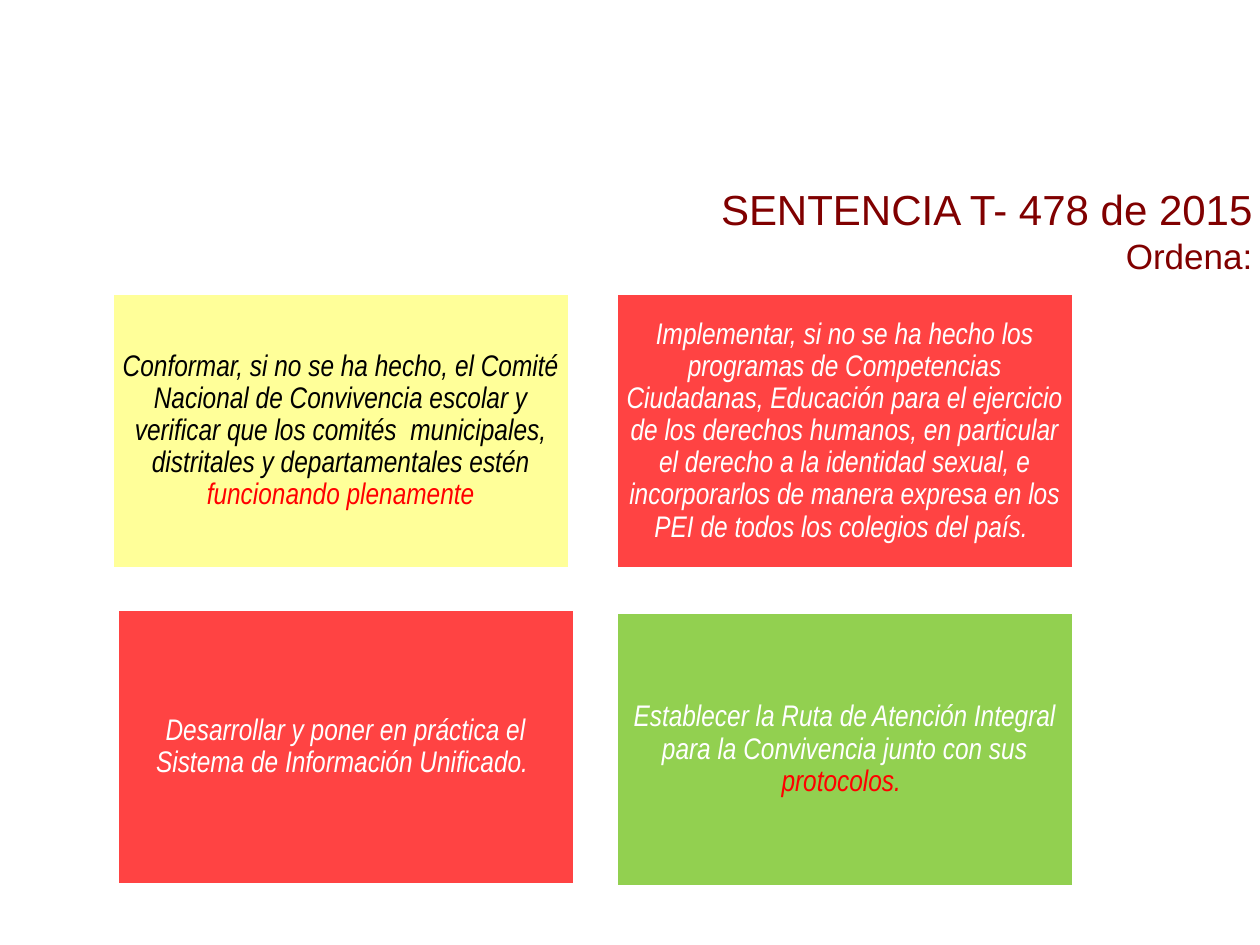
from dataclasses import dataclass
from lxml.etree import SubElement
from pptx import Presentation
from pptx.dml.color import RGBColor
from pptx.enum.shapes import MSO_SHAPE
from pptx.enum.text import MSO_ANCHOR, MSO_AUTO_SIZE, PP_ALIGN
from pptx.oxml.ns import qn
from pptx.util import Cm, Pt


@dataclass(frozen=True)
class Theme:
    wine: str = "800000"
    cream: str = "FFFF99"
    coral: str = "FF4343"
    green: str = "92D050"
    red: str = "FF0000"
    black: str = "000000"
    white: str = "FFFFFF"
    head: int = 24
    sub: int = 20
    text: int = 17


theme = Theme()


def write(para, text, *, font, size, color, slant=False):
    run = para.add_run()
    run.text = text
    run.font.name = font
    run.font.size = Pt(size)
    run.font.italic = slant
    run.font.color.rgb = RGBColor.from_string(color)


def setup(frame, inset, align):
    frame.word_wrap = True
    frame.auto_size = MSO_AUTO_SIZE.NONE
    frame.vertical_anchor = MSO_ANCHOR.MIDDLE
    frame.margin_left = frame.margin_right = Cm(inset)
    frame.margin_top = frame.margin_bottom = Cm(inset)
    para = frame.paragraphs[0]
    para.alignment = align
    return para


deck = Presentation()
deck.slide_width, deck.slide_height = Cm(25.4), Cm(19.05)
slide = deck.slides.add_slide(deck.slide_layouts[5])

title = slide.shapes.title
title.left, title.top = Cm(12.5), Cm(3.53)
title.width, title.height = Cm(13), Cm(2.21)
para = setup(title.text_frame, 0.25, PP_ALIGN.RIGHT)
write(para, "SENTENCIA T- 478 de 2015", font="Arial", size=theme.head, color=theme.wine)
para.add_line_break()
SubElement(para._p.find(qn("a:br")), qn("a:rPr"), sz=str(theme.head * 100))
write(para, "Ordena:", font="Arial", size=theme.sub, color=theme.wine)

cards = [
    (2.26, 5.92, theme.cream, theme.black,
     "Conformar, si no se ha hecho, el Comité Nacional de Convivencia escolar y "
     "verificar que los comités  municipales, distritales y departamentales estén ",
     "funcionando plenamente"),
    (12.42, 5.92, theme.coral, theme.white,
     "Implementar, si no se ha hecho los programas de Competencias Ciudadanas, "
     "Educación para el ejercicio de los derechos humanos, en particular el derecho "
     "a la identidad sexual, e incorporarlos de manera expresa en los PEI de todos "
     "los colegios del país. ", ""),
    (2.36, 12.29, theme.coral, theme.white,
     "Desarrollar y poner en práctica el Sistema de Información Unificado. ", ""),
    (12.42, 12.34, theme.green, theme.white,
     "Establecer la Ruta de Atención Integral para la Convivencia junto con sus ",
     "protocolos. "),
]
for left, top, fill, ink, text, stress in cards:
    card = slide.shapes.add_shape(
        MSO_SHAPE.RECTANGLE, Cm(left), Cm(top), Cm(9.22), Cm(5.54))
    card.shadow.inherit = False
    card.fill.solid()
    card.fill.fore_color.rgb = RGBColor.from_string(fill)
    card.line.color.rgb = RGBColor.from_string(theme.white)
    card.line.width = Pt(2)
    para = setup(card.text_frame, 0.17, PP_ALIGN.CENTER)
    para.line_spacing = 0.9
    for part, color in ((text, ink), (stress, theme.red)):
        if part:
            write(para, part, font="Arial Narrow", size=theme.text, color=color, slant=True)

deck.save("out.pptx")
